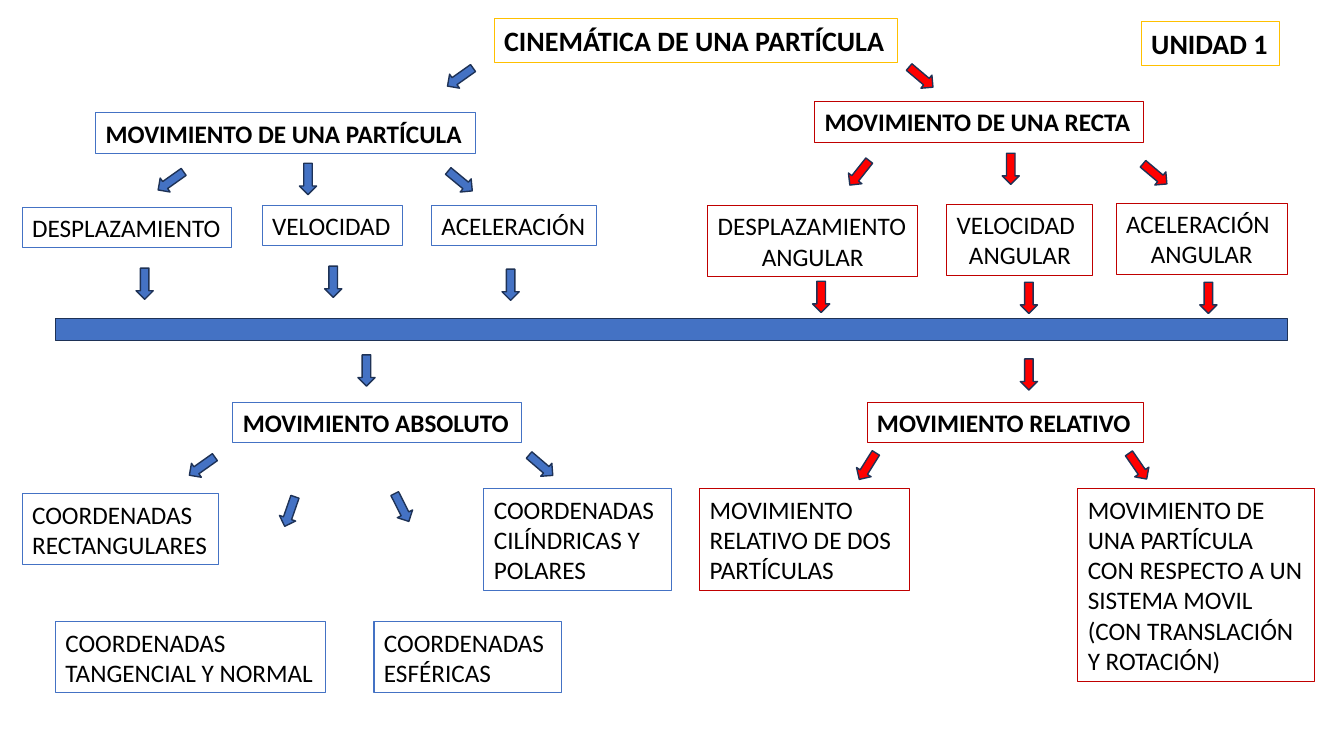
"""Build a concept map of particle kinematics."""
from pptx import Presentation
from pptx.dml.color import RGBColor
from pptx.enum.shapes import MSO_SHAPE as Shape
from pptx.enum.text import MSO_ANCHOR as Anchor, MSO_AUTO_SIZE as AutoSize, PP_ALIGN as Align
from pptx.util import Pt

PX = 9144
BLUE, RED, DARK_RED, GOLD = "4472C4", "FF0000", "C00000", "FFC000"
NAVY, BLACK = "1E3256", "000000"


def px(*lengths):
    """Turn pixel lengths into EMU."""
    return [length * PX for length in lengths]


def set_color(color_format, color):
    """Set a colour from a hex string."""
    color_format.rgb = RGBColor.from_string(color)


def set_outline(shape, color, width):
    """Draw the outline of a shape."""
    set_color(shape.line.color, color)
    shape.line.width = Pt(width)


def write_text(shape, text, size=18, bold=False, last_align=Align.LEFT):
    """Write one paragraph per line of text in a box of fixed size."""
    frame = shape.text_frame
    frame.text = text
    frame.word_wrap = False
    frame.auto_size = AutoSize.NONE
    frame.vertical_anchor = Anchor.TOP
    for paragraph in frame.paragraphs:
        paragraph.alignment = Align.LEFT
        paragraph.line_spacing = 1.0
        font = paragraph.runs[0].font
        font.name, font.size, font.bold = "Calibri", Pt(size), bold
        set_color(font.color, BLACK)
    frame.paragraphs[-1].alignment = last_align


def add_label(slide, text, left, top, width, color, size=18, **text_format):
    """Add an outlined label whose height follows its lines and text size."""
    line_count = len(text.split("\n"))
    height = round(10 + 1.68 * size * line_count)
    shape = slide.shapes.add_textbox(*px(left, top, width, height))
    set_outline(shape, color, 0.75)
    write_text(shape, text, size=size, **text_format)


def add_solid(slide, kind, left, top, width, height, color):
    """Add a filled shape with a navy outline."""
    shape = slide.shapes.add_shape(kind, *px(left, top, width, height))
    shape.shadow.inherit = False
    shape.fill.solid()
    set_color(shape.fill.fore_color, color)
    set_outline(shape, NAVY, 1)
    return shape


def add_arrow(slide, left, top, color, rotation=0):
    """Add a small block arrow, pointing down unless rotated."""
    add_solid(slide, Shape.DOWN_ARROW, left, top, 17, 31, color).rotation = rotation


def draw_header(slide, left, top):
    """Place the title, the unit label and the arrows to both branches."""
    title = slide.shapes.title
    title.left, title.top, title.width, title.height = px(left, top, 400, 44)
    set_outline(title, GOLD, 0.75)
    write_text(title, "CINEMÁTICA DE UNA PARTÍCULA", size=20, bold=True)
    add_label(slide, "UNIDAD 1", left + 642, top + 3, 137, GOLD, size=20, bold=True)
    add_arrow(slide, left - 42, top + 43, BLUE, 54.7)
    add_arrow(slide, left + 415, top + 43, RED, 310.2)


def draw_branch(slide, left, top, heading, topics, arrows, line_color, arrow_color,
                last_align=Align.LEFT):
    """Place a heading, its topics and their arrows relative to a corner."""
    text, x, y, width = heading
    add_label(slide, text, left + x, top + y, width, line_color, bold=True)
    for text, x, y, width in topics:
        add_label(slide, text, left + x, top + y, width, line_color, last_align=last_align)
    for x, y, rotation in arrows:
        add_arrow(slide, left + x, top + y, arrow_color, rotation)


def draw_motion_branches(slide):
    """Place the particle and line branches above the bar."""
    draw_branch(
        slide, 22, 112, ("MOVIMIENTO DE UNA PARTÍCULA", 73, 0, 377),
        [("DESPLAZAMIENTO", 0, 94, 208),
         ("VELOCIDAD", 238, 92, 139),
         ("ACELERACIÓN", 406, 92, 164)],
        [(139, 52, 54.7), (275, 50, 0), (426, 52, 309.6),
         (113, 154, 0), (300, 152, 0), (476, 155, 0)],
        BLUE, BLUE)
    draw_branch(
        slide, 702, 101, ("MOVIMIENTO DE UNA RECTA", 106, 0, 326),
        [("DESPLAZAMIENTO\nANGULAR", 0, 103, 208),
         ("VELOCIDAD\nANGULAR", 237, 102, 145),
         ("ACELERACIÓN\nANGULAR", 405, 101, 170)],
        [(142, 55, 38.4), (292, 51, 0), (435, 56, 310.2),
         (104, 178, 0), (310, 179, 0), (488, 179, 0)],
        DARK_RED, RED, last_align=Align.CENTER)


def draw_frame_branches(slide):
    """Place the absolute and relative motion branches below the bar."""
    draw_branch(
        slide, 22, 352, ("MOVIMIENTO ABSOLUTO", 209, 47, 286),
        [("COORDENADAS\nRECTANGULARES", 0, 138, 195),
         ("COORDENADAS\nTANGENCIAL Y NORMAL", 33, 265, 268),
         ("COORDENADAS\nCILÍNDRICAS Y\nPOLARES", 458, 133, 186),
         ("COORDENADAS\nESFÉRICAS", 349, 265, 186)],
        [(333, 0, 0), (170, 95, 54.7), (257, 140, 19.2),
         (368, 136, 333.1), (506, 94, 310.7)],
        BLUE, BLUE)
    draw_branch(
        slide, 694, 352, ("MOVIMIENTO RELATIVO", 166, 47, 274),
        [("MOVIMIENTO\nRELATIVO DE DOS\nPARTÍCULAS", 0, 133, 208),
         ("MOVIMIENTO DE\nUNA PARTÍCULA\nCON RESPECTO A UN\nSISTEMA MOVIL\n"
          "(CON TRANSLACIÓN\nY ROTACIÓN)", 375, 133, 235)],
        [(318, 4, 0), (158, 95, 32.1), (426, 95, 325.4)],
        DARK_RED, RED)


def main():
    """Build and save the presentation."""
    presentation = Presentation()
    presentation.slide_width, presentation.slide_height = px(1333, 750)
    slide = presentation.slides.add_slide(presentation.slide_layouts[5])
    draw_header(slide, 490, 18)
    draw_motion_branches(slide)
    add_solid(slide, Shape.RECTANGLE, 55, 316, 1222, 22, BLUE)
    draw_frame_branches(slide)
    presentation.save("out.pptx")


if __name__ == "__main__":
    main()
